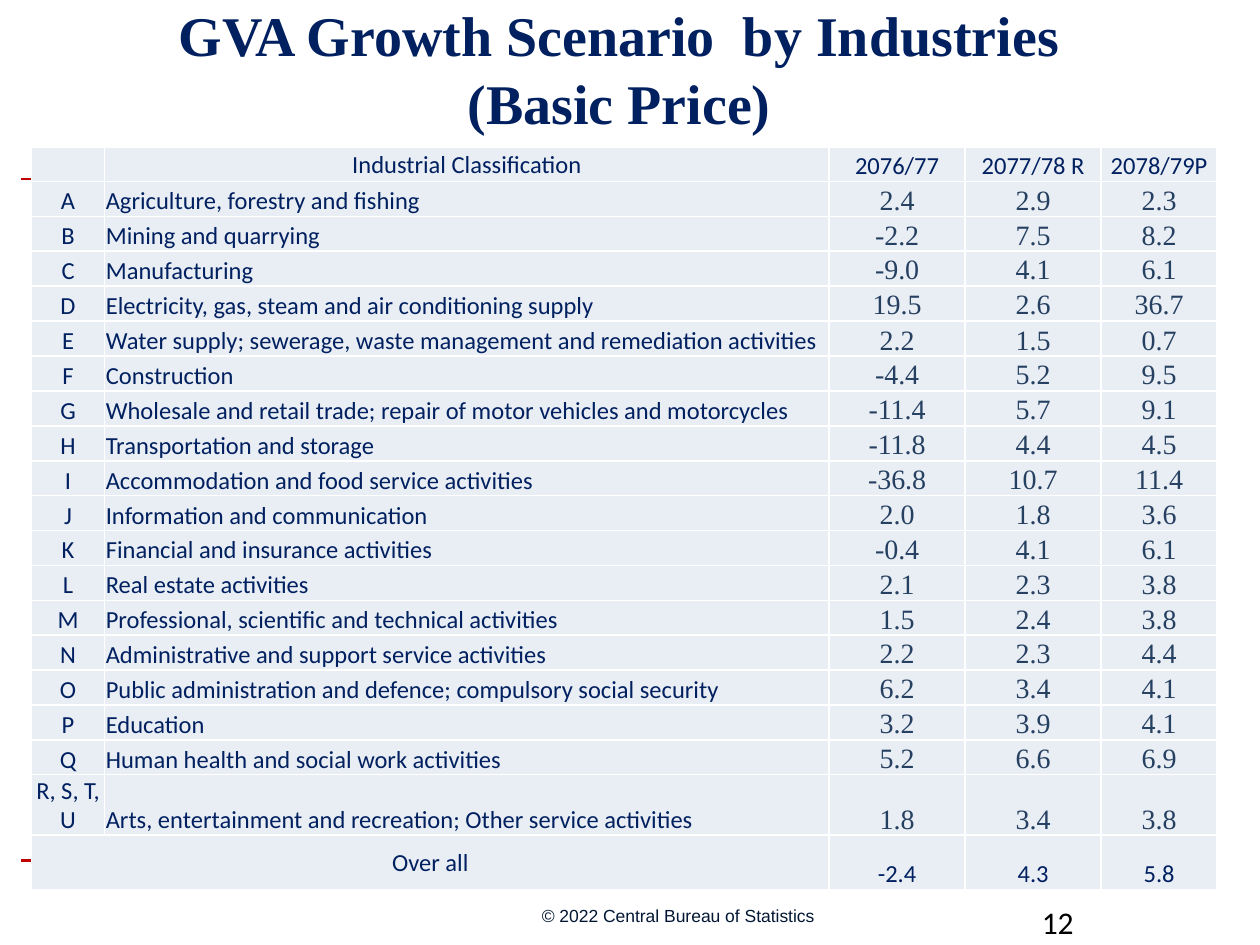
"""Build the slide on GVA growth by industry at basic prices."""
from lxml import etree
from pptx import Presentation
from pptx.dml.color import RGBColor
from pptx.enum.shapes import MSO_CONNECTOR
from pptx.enum.text import MSO_ANCHOR, PP_ALIGN
from pptx.oxml.ns import qn
from pptx.util import Inches, Pt

STRAIGHT = MSO_CONNECTOR.STRAIGHT
TOP, MIDDLE, BOTTOM = MSO_ANCHOR.TOP, MSO_ANCHOR.MIDDLE, MSO_ANCHOR.BOTTOM
LEFT, CENTER = PP_ALIGN.LEFT, PP_ALIGN.CENTER

COLORS = {
    "navy": "002060", "value": "254061", "rule": "C00000", "cell": "E9EDF4",
    "border": "FFFFFF", "copyright": "031735", "number": "000000",
}
TITLE = "GVA Growth Scenario  by Industries\v(Basic Price)"
COPYRIGHT = "© 2022 Central Bureau of Statistics"
PAGE_NUMBER = "12"
HEADER = ("", "Industrial Classification", "2076/77", "2077/78 R", "2078/79P")
INDUSTRIES = [
    ("A", "Agriculture, forestry and fishing", "2.4", "2.9", "2.3"),
    ("B", "Mining and quarrying", "-2.2", "7.5", "8.2"),
    ("C", "Manufacturing", "-9.0", "4.1", "6.1"),
    ("D", "Electricity, gas, steam and air conditioning supply", "19.5", "2.6", "36.7"),
    ("E", "Water supply; sewerage, waste management and remediation activities", "2.2", "1.5", "0.7"),
    ("F", "Construction", "-4.4", "5.2", "9.5"),
    ("G", "Wholesale and retail trade; repair of motor vehicles and motorcycles", "-11.4", "5.7", "9.1"),
    ("H", "Transportation and storage", "-11.8", "4.4", "4.5"),
    ("I", "Accommodation and food service activities", "-36.8", "10.7", "11.4"),
    ("J", "Information and communication", "2.0", "1.8", "3.6"),
    ("K", "Financial and insurance activities", "-0.4", "4.1", "6.1"),
    ("L", "Real estate activities", "2.1", "2.3", "3.8"),
    ("M", "Professional, scientific and technical activities", "1.5", "2.4", "3.8"),
    ("N", "Administrative and support service activities", "2.2", "2.3", "4.4"),
    ("O", "Public administration and defence; compulsory social security", "6.2", "3.4", "4.1"),
    ("P", "Education", "3.2", "3.9", "4.1"),
    ("Q", "Human health and social work activities", "5.2", "6.6", "6.9"),
    ("R, S, T, U", "Arts, entertainment and recreation; Other service activities", "1.8", "3.4", "3.8"),
]
OVERALL = ("Over all", "", "-2.4", "4.3", "5.8")
COLUMN_WIDTHS = (0.58, 5.75, 1.08, 1.08, 0.92)
ROW_HEIGHT = 0.27
TALL_ROWS = {"E": 0.28, "R, S, T, U": 0.48, "Over all": 0.43}


def style(paragraph, size, color, font="Calibri", align=LEFT, bold=False):
    paragraph.alignment = align
    paragraph.font.size = Pt(size)
    paragraph.font.name = font
    paragraph.font.bold = bold
    paragraph.font.color.rgb = RGBColor.from_string(COLORS[color])


def add_text(slide, text, box, anchor, margins, **look):
    frame = slide.shapes.add_textbox(*map(Inches, box)).text_frame
    frame.word_wrap = True
    frame.vertical_anchor = anchor
    frame.margin_left = frame.margin_right = Inches(margins[0])
    frame.margin_top = frame.margin_bottom = Inches(margins[1])
    frame.text = text
    style(frame.paragraphs[0], **look)


def add_rule(slide, y):
    rule = slide.shapes.add_connector(STRAIGHT, *map(Inches, (0.17, y, 9.67, y)))
    rule.line.color.rgb = RGBColor.from_string(COLORS["rule"])
    rule.line.width = Pt(1.5)
    etree.SubElement(rule._element.spPr, qn("a:effectLst"))


def format_cell(cell, text, anchor, **look):
    cell.margin_left = cell.margin_right = cell.margin_top = Inches(0.01)
    cell.margin_bottom = 0
    cell.vertical_anchor = anchor
    cell.text = text
    paragraph = cell.text_frame.paragraphs[0]
    style(paragraph, **look)
    if not text:
        etree.SubElement(paragraph._p, qn("a:endParaRPr"), sz=str(look["size"] * 100))
    properties = cell._tc.get_or_add_tcPr()
    for side in ("lnL", "lnR", "lnT", "lnB"):
        border = etree.SubElement(properties, qn(f"a:{side}"), w=str(Pt(1)))
        fill = etree.SubElement(border, qn("a:solidFill"))
        etree.SubElement(fill, qn("a:srgbClr"), val=COLORS["border"])
    cell.fill.solid()
    cell.fill.fore_color.rgb = RGBColor.from_string(COLORS["cell"])


def add_growth_table(slide):
    rows = [HEADER, *INDUSTRIES, OVERALL]
    heights = [TALL_ROWS.get(row[0], ROW_HEIGHT) for row in rows]
    box = (0.25, 1.17, sum(COLUMN_WIDTHS), sum(heights))
    table = slide.shapes.add_table(len(rows), len(HEADER), *map(Inches, box)).table
    for column, width in zip(table.columns, COLUMN_WIDTHS):
        column.width = Inches(width)
    for r, (row, height) in enumerate(zip(rows, heights)):
        table.rows[r].height = Inches(height)
        is_industry = row in INDUSTRIES
        for c, text in enumerate(row):
            look = {"size": 14, "color": "navy", "align": CENTER}
            if is_industry and c == 1:
                look["align"] = LEFT
            elif is_industry and c > 1:
                look.update(size=16, color="value", font="Times New Roman")
            anchor = BOTTOM if is_industry or c > 1 else MIDDLE
            format_cell(table.cell(r, c), text, anchor, **look)
    last = len(rows) - 1
    table.cell(last, 0).merge(table.cell(last, 1))


def main():
    deck = Presentation()
    deck.slide_width, deck.slide_height = Inches(10), Inches(7.5)
    slide = deck.slides.add_slide(deck.slide_layouts[6])
    for y in (1.42, 6.83):
        add_rule(slide, y)
    add_text(slide, COPYRIGHT, (4.3, 7.17, 2.2, 0.19), MIDDLE, (0, 0),
             size=10, color="copyright", font="Arial")
    add_text(slide, TITLE, (0, 0.08, 9.83, 0.92), MIDDLE, (0.1, 0.05),
             size=32, color="navy", font="Times New Roman", align=CENTER, bold=True)
    add_growth_table(slide)
    add_text(slide, PAGE_NUMBER, (8.17, 7.12, 1.33, 0.23), TOP, (0.1, 0.05),
             size=18, color="number")
    deck.save("out.pptx")


if __name__ == "__main__":
    main()
